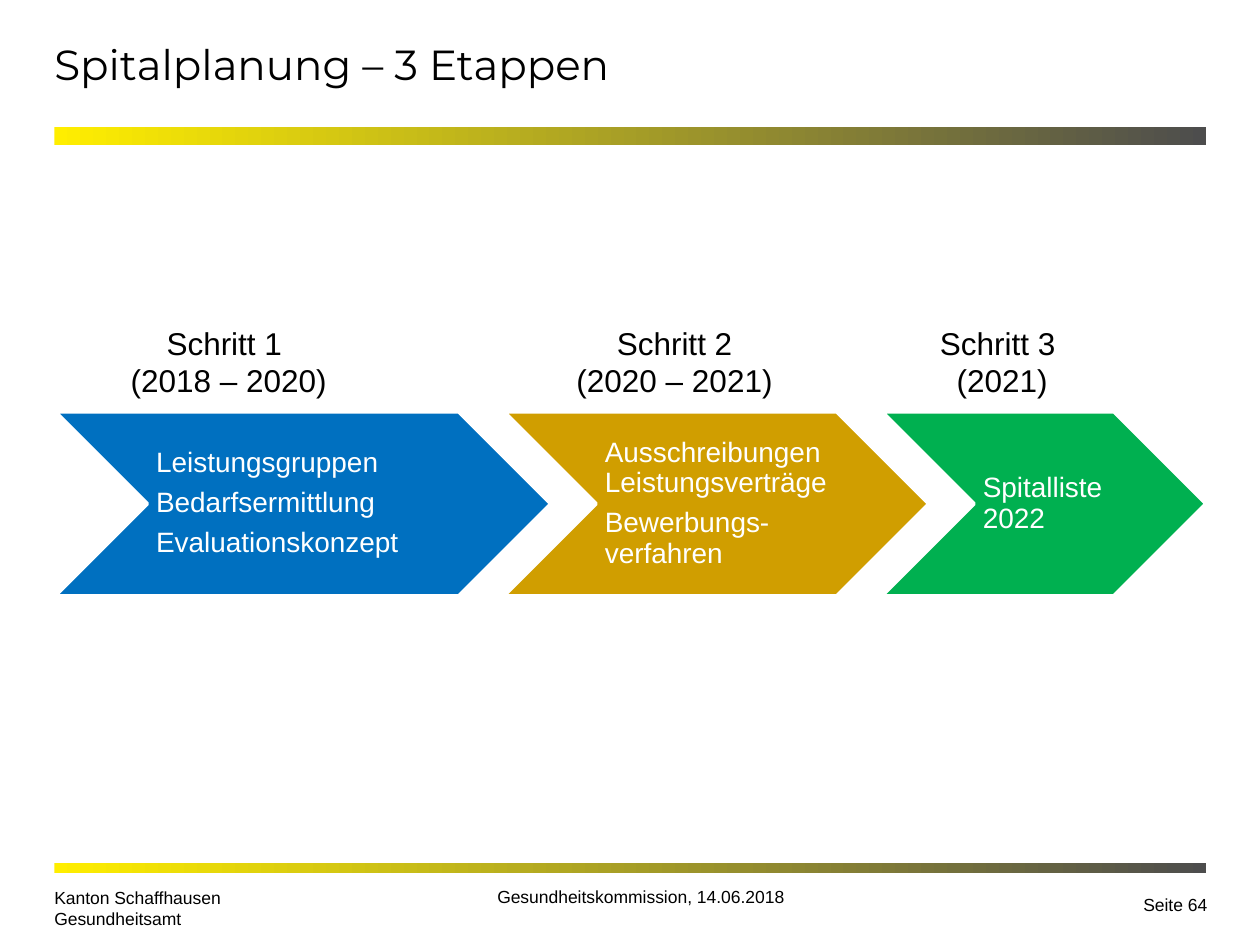
from pptx import Presentation
from pptx.dml.color import RGBColor
from pptx.enum.shapes import MSO_SHAPE
from pptx.enum.text import MSO_ANCHOR, MSO_AUTO_SIZE, PP_ALIGN
from pptx.util import Pt

LEFT, CENTER, RIGHT = PP_ALIGN.LEFT, PP_ALIGN.CENTER, PP_ALIGN.RIGHT
TOP, MIDDLE, BOTTOM = MSO_ANCHOR.TOP, MSO_ANCHOR.MIDDLE, MSO_ANCHOR.BOTTOM
RECTANGLE, CHEVRON = MSO_SHAPE.RECTANGLE, MSO_SHAPE.CHEVRON
NO_AUTOFIT = MSO_AUTO_SIZE.NONE
TITLE_ONLY = 5

THEME = {
    "title_font": "Montserrat", "body_font": "Arial",
    "title_size": 24, "label_size": 18, "step_size": 16, "footer_size": 10,
    "text": "000000", "inverse": "FFFFFF",
    "bar_start": "FFEE00", "bar_end": "4D4D4D",
}

TITLE = "Spitalplanung – 3 Etappen"
STEPS = [
    {"label": ["Schritt 1 ", "(2018 – 2020)"], "label_left": 59.8,
     "width": 283, "color": "0070C0",
     "topics": ["Leistungsgruppen", "Bedarfsermittlung", "Evaluationskonzept"]},
    {"label": ["Schritt 2", "(2020 – 2021)"], "label_left": 314.6,
     "width": 242.6, "color": "D09E00",
     "topics": ["Ausschreibungen Leistungsverträge", "Bewerbungs-verfahren"]},
    {"label": ["Schritt 3 ", "(2021)"], "label_left": 501.8,
     "width": 185, "color": "00B050",
     "topics": ["Spitalliste 2022"]},
]
# lines, (left, top, width, height), alignment, anchor, insets
FOOTERS = [
    (["Kanton Schaffhausen", "Gesundheitsamt"], (31, 499.7, 190.8, 34.6),
     LEFT, BOTTOM, (0, 3.6, 0, 3.6)),
    (["Gesundheitskommission, 14.06.2018"], (252, 502.6, 228.2, 37.4),
     CENTER, TOP, (7.2, 3.6, 7.2, 3.6)),
    (["Seite 64"], (629.3, 499.7, 67.7, 34.6),
     RIGHT, MIDDLE, (7.2, 3.6, 7.2, 3.6)),
]

MARGIN, BAR_WIDTH = 31, 658
BARS = [(72.7, 10.1), (493.2, 5.4)]  # top, height
CHEVRON_LEFT, CHEVRON_TOP, CHEVRON_HEIGHT, CHEVRON_OVERLAP = 31.7, 235.4, 105.1, 26.6
LABEL_TOP, LABEL_WIDTH, LABEL_HEIGHT = 181.4, 141.8, 51.1


def points(values):
    return [Pt(value) for value in values]


def rgb(name):
    return RGBColor.from_string(THEME.get(name, name))


def write_text(shape, lines, *, size, font="body_font", color="text", align=LEFT,
               anchor=TOP, insets=(7.2, 3.6, 7.2, 3.6), line_spacing=1, space_after=0):
    frame = shape.text_frame
    frame.word_wrap = True
    frame.auto_size = NO_AUTOFIT
    frame.vertical_anchor = anchor
    (frame.margin_left, frame.margin_top,
     frame.margin_right, frame.margin_bottom) = points(insets)
    frame.text = "\n".join(lines)
    for paragraph in frame.paragraphs:
        paragraph.alignment = align
        paragraph.line_spacing = line_spacing
        paragraph.space_after = Pt(space_after)
        paragraph.font.name = THEME[font]
        paragraph.font.size = Pt(THEME[size])
        paragraph.font.color.rgb = rgb(color)


def add_text(slide, box, lines, **text_format):
    write_text(slide.shapes.add_textbox(*points(box)), lines, **text_format)


def add_gradient_bar(slide, top, height):
    bar = slide.shapes.add_shape(RECTANGLE, *points((MARGIN, top, BAR_WIDTH, height)))
    bar.shadow.inherit = False
    bar.line.fill.background()
    bar.fill.gradient()
    bar.fill.gradient_angle = 0
    for stop, color in zip(bar.fill.gradient_stops, ("bar_start", "bar_end")):
        stop.color.rgb = rgb(color)


def add_step(slide, step, left):
    box = (left, CHEVRON_TOP, step["width"], CHEVRON_HEIGHT)
    chevron = slide.shapes.add_shape(CHEVRON, *points(box))
    chevron.shadow.inherit = False
    chevron.fill.solid()
    chevron.fill.fore_color.rgb = rgb(step["color"])
    chevron.line.color.rgb = rgb("inverse")
    chevron.line.width = Pt(2)
    write_text(chevron, step["topics"], size="step_size", color="inverse", anchor=MIDDLE,
               insets=(5, 1.4, 1.4, 1.4), line_spacing=0.9, space_after=5.6)
    label_box = (step["label_left"], LABEL_TOP, LABEL_WIDTH, LABEL_HEIGHT)
    add_text(slide, label_box, step["label"], size="label_size", align=CENTER)


def main():
    presentation = Presentation()
    presentation.slide_width, presentation.slide_height = Pt(720), Pt(540)
    slide = presentation.slides.add_slide(presentation.slide_layouts[TITLE_ONLY])

    title = slide.shapes.title
    title.left, title.top, title.width, title.height = points((MARGIN, 0, 514, 72.7))
    write_text(title, [TITLE], size="title_size", font="title_font", anchor=MIDDLE,
               insets=(0, 3.6, 0, 3.6))

    for top, height in BARS:
        add_gradient_bar(slide, top, height)

    left = CHEVRON_LEFT
    for step in STEPS:
        add_step(slide, step, left)
        left += step["width"] - CHEVRON_OVERLAP

    for lines, box, align, anchor, insets in FOOTERS:
        add_text(slide, box, lines, size="footer_size", align=align, anchor=anchor,
                 insets=insets)

    presentation.save("out.pptx")


if __name__ == "__main__":
    main()
